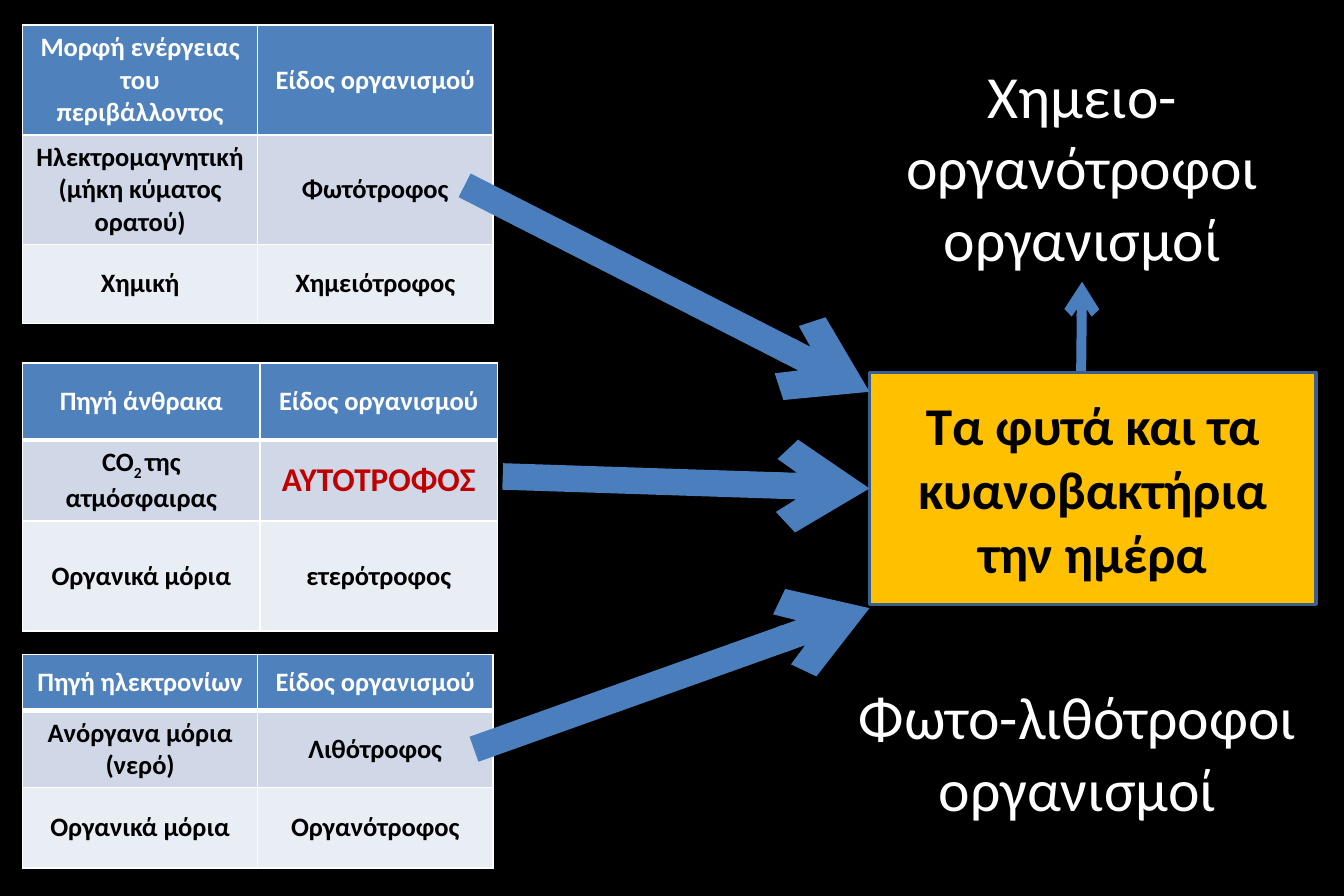
from dataclasses import dataclass

from lxml import etree
from pptx import Presentation
from pptx import util as u
from pptx.dml.color import RGBColor
from pptx.enum import shapes, text
from pptx.oxml.ns import qn

COLORS = {
    "background": "000000", "white": "FFFFFF", "black": "000000",
    "header": "4F81BD", "band_dark": "D0D8E8", "band_light": "E9EDF4",
    "emphasis": "C00000", "arrow": "4B7EBC", "box": "FFC000", "box_line": "3A5F8C",
}
FONT = "Calibri"
EMPHASIZED = "ΑΥΤΟΤΡΟΦΟΣ"


@dataclass
class OrganismTable:
    top: float
    column_width: float
    row_heights: tuple[float, ...]
    header_rule: float
    rows: tuple[tuple[str, str], ...]


@dataclass
class Arrow:
    start: tuple[float, float]
    end: tuple[float, float]
    width: float = 16
    joins_box: bool = False


@dataclass
class Label:
    left: float
    top: float
    height: float
    content: str


TABLE_LEFT = 0.48
TABLES = (
    OrganismTable(0.53, 5, (2.34, 2.31, 1.68), 1, (
        ("Μορφή ενέργειας του περιβάλλοντος", "Είδος οργανισμού"),
        ("Ηλεκτρομαγνητική\n(μήκη κύματος ορατού)", "Φωτότροφος"),
        ("Χημική", "Χημειότροφος"))),
    OrganismTable(13.92, 5, (1.19, 1.63, 1.71), 3, (
        ("Πηγή ηλεκτρονίων", "Είδος οργανισμού"),
        ("Ανόργανα μόρια\n(νερό)", "Λιθότροφος"),
        ("Οργανικά μόρια", "Οργανότροφος"))),
    OrganismTable(7.72, 5.05, (1.63, 1.73, 2.34), 3, (
        ("Πηγή άνθρακα", "Είδος οργανισμού"),
        ("CO|2 |της ατμόσφαιρας", EMPHASIZED),
        ("Οργανικά μόρια", "ετερότροφος"))),
)
RESULT_ARROW = Arrow((22.99, 8.05), (23.01, 5.99), width=6)
SOURCE_ARROWS = (
    Arrow((9.88, 3.94), (18.49, 8.33)),
    Arrow((10.69, 10.13), (18.49, 10.39), joins_box=True),
    Arrow((10.08, 15.93), (18.49, 12.93)),
)
LABEL_WIDTH = 11.13
LABELS = (
    Label(17.45, 1.12, 4.88, "Χημειο-οργανότροφοι οργανισμοί"),
    Label(17.35, 14.33, 3.33, "Φωτο-λιθότροφοι οργανισμοί"),
)


def rgb(name: str) -> RGBColor:
    return RGBColor.from_string(COLORS[name])


def write_text(frame, content: str, *, size: float, color: str, bold: bool = False) -> None:
    """Newlines split paragraphs; text between bars is subscript."""
    frame.word_wrap = True
    for number, line in enumerate(content.split("\n")):
        paragraph = frame.add_paragraph() if number else frame.paragraphs[0]
        paragraph.alignment = text.PP_ALIGN.CENTER
        for index, piece in enumerate(line.split("|")):
            run = paragraph.add_run()
            run.text = piece
            run.font.name = FONT
            run.font.size = u.Pt(size)
            run.font.bold = bold
            run.font.color.rgb = rgb(color)
            if index % 2:
                run.font._element.set("baseline", "-25000")


def set_borders(cell, *, top: float, bottom: float) -> None:
    properties = cell._tc.get_or_add_tcPr()
    widths = {"lnL": 1, "lnR": 1, "lnT": top, "lnB": bottom}
    for index, (side, width) in enumerate(widths.items()):
        line = etree.Element(qn(f"a:{side}"), w=str(u.Pt(width)))
        fill = etree.SubElement(line, qn("a:solidFill"))
        etree.SubElement(fill, qn("a:srgbClr"), val=COLORS["white"])
        properties.insert(index, line)


def draw_table(slide, spec: OrganismTable) -> None:
    table = slide.shapes.add_table(
        len(spec.rows), 2, u.Cm(TABLE_LEFT), u.Cm(spec.top),
        u.Cm(2 * spec.column_width), u.Cm(sum(spec.row_heights))).table
    for column in table.columns:
        column.width = u.Cm(spec.column_width)
    for row, (height, contents) in enumerate(zip(spec.row_heights, spec.rows)):
        table.rows[row].height = u.Cm(height)
        for column, content in enumerate(contents):
            cell = table.cell(row, column)
            cell.vertical_anchor = text.MSO_ANCHOR.MIDDLE
            cell.fill.solid()
            cell.fill.fore_color.rgb = rgb(("header", "band_dark", "band_light")[row])
            set_borders(cell, top=spec.header_rule if row == 1 else 1,
                        bottom=spec.header_rule if row == 0 else 1)
            emphasized = content == EMPHASIZED
            color = "emphasis" if emphasized else "black" if row else "white"
            write_text(cell.text_frame, content, size=20 if emphasized else 16,
                       color=color, bold=True)


def draw_arrow(slide, arrow: Arrow, box=None) -> None:
    connector = slide.shapes.add_connector(
        shapes.MSO_CONNECTOR.STRAIGHT, *map(u.Cm, arrow.start + arrow.end))
    if arrow.joins_box:
        connector.end_connect(box, 1)
    connector.line.width = u.Pt(arrow.width)
    connector.line.color.rgb = rgb("arrow")
    etree.SubElement(connector.line._get_or_add_ln(), qn("a:tailEnd"), type="arrow")
    etree.SubElement(connector._element.spPr, qn("a:effectLst"))


def draw_box(slide):
    box = slide.shapes.add_shape(shapes.MSO_SHAPE.RECTANGLE, u.Cm(18.49), u.Cm(7.92),
                                 u.Cm(9.5), u.Cm(4.93))
    box.shadow.inherit = False
    box.fill.solid()
    box.fill.fore_color.rgb = rgb("box")
    box.line.color.rgb = rgb("box_line")
    box.line.width = u.Pt(2)
    box.text_frame.vertical_anchor = text.MSO_ANCHOR.MIDDLE
    write_text(box.text_frame, "Τα φυτά και τα κυανοβακτήρια την ημέρα",
               size=32, color="black", bold=True)
    return box


def draw_label(slide, label: Label) -> None:
    shape = slide.shapes.add_textbox(u.Cm(label.left), u.Cm(label.top),
                                     u.Cm(LABEL_WIDTH), u.Cm(label.height))
    write_text(shape.text_frame, label.content, size=36, color="white")


def main() -> None:
    presentation = Presentation()
    presentation.slide_width = u.Cm(28.58)
    presentation.slide_height = u.Cm(19.05)
    slide = presentation.slides.add_slide(presentation.slide_layouts[6])
    slide.background.fill.solid()
    slide.background.fill.fore_color.rgb = rgb("background")

    # Classification tables
    for table in TABLES:
        draw_table(slide, table)

    # Organisms box with its arrows
    draw_arrow(slide, RESULT_ARROW)
    box = draw_box(slide)
    for arrow in SOURCE_ARROWS:
        draw_arrow(slide, arrow, box)

    # Resulting organism types
    for label in LABELS:
        draw_label(slide, label)

    presentation.save("out.pptx")


if __name__ == "__main__":
    main()
